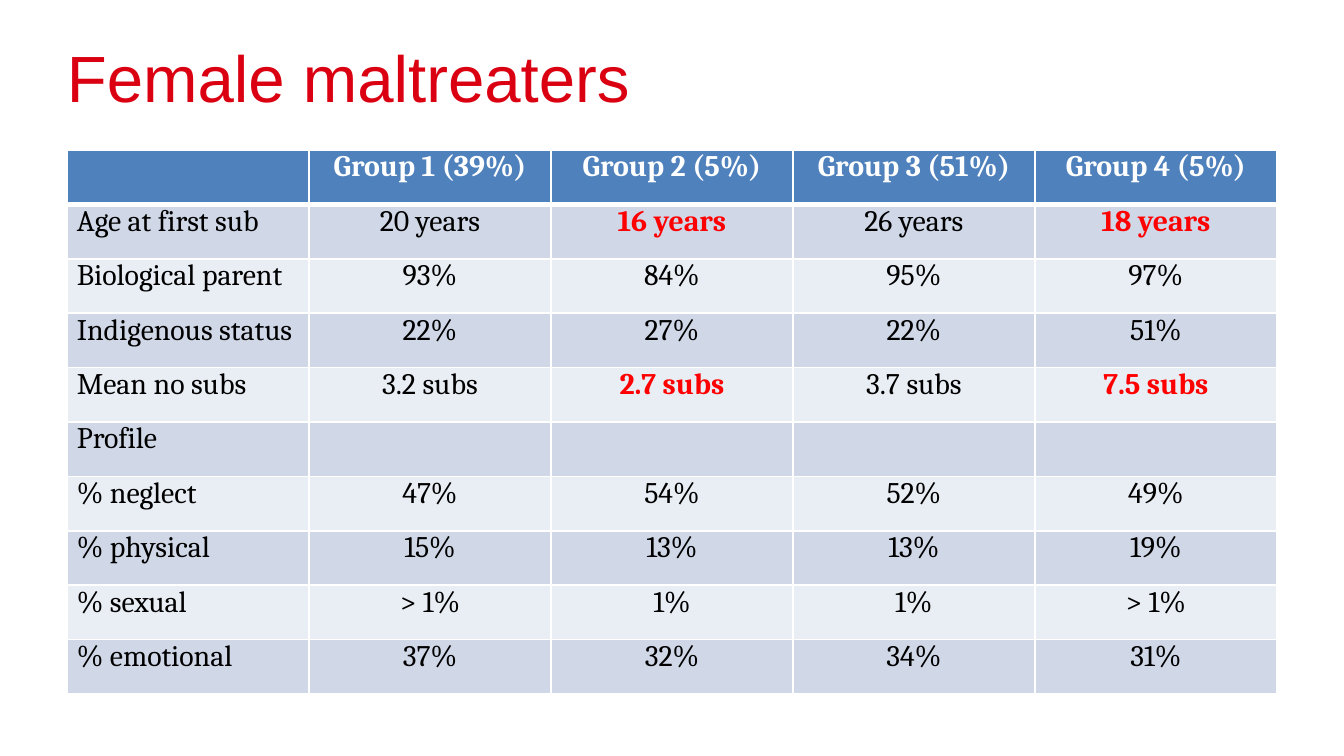
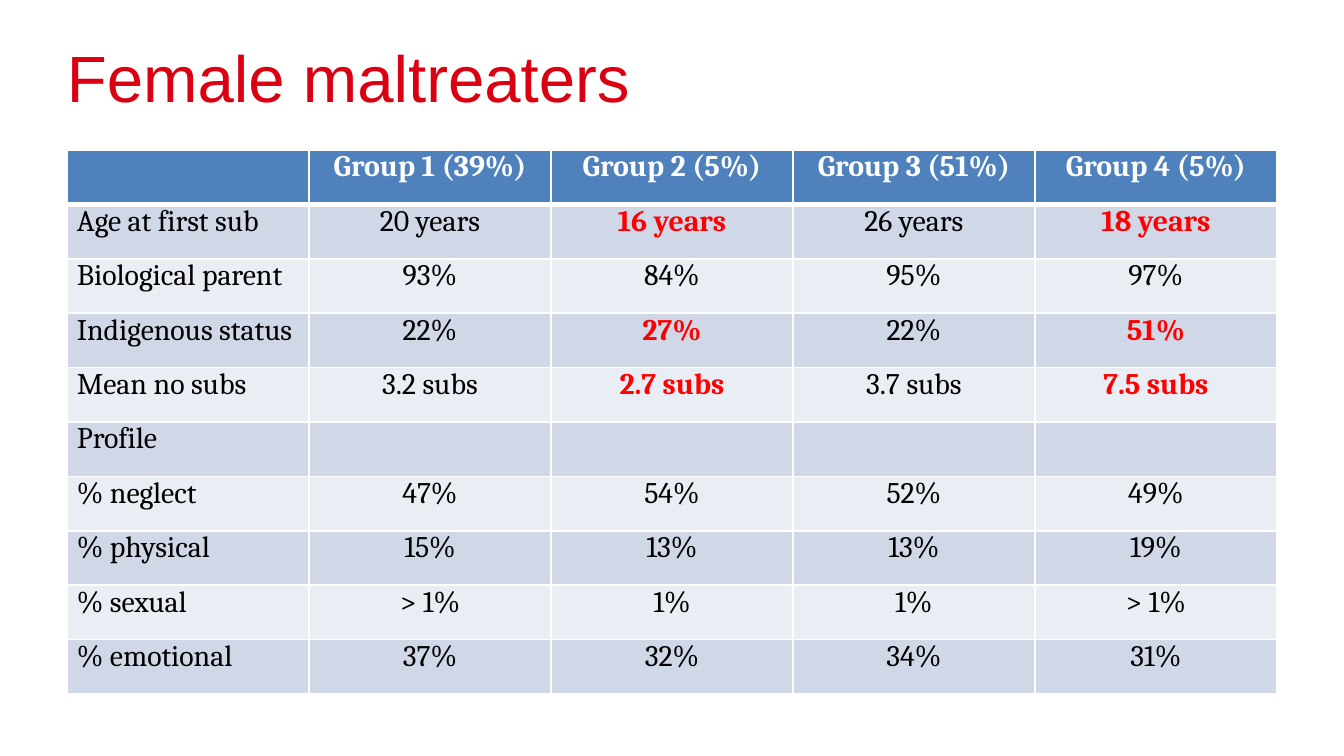
from lxml.etree import SubElement
from pptx import Presentation
from pptx.dml.color import RGBColor
from pptx.enum.text import MSO_ANCHOR as Anchor, PP_ALIGN as Align
from pptx.oxml.ns import qn
from pptx.util import Pt

# Content
TITLE = "Female maltreaters"
ROWS = [
    ("", "Group 1 (39%)", "Group 2 (5%)", "Group 3 (51%)", "Group 4 (5%)"),
    ("Age at first sub", "20 years", "16 years", "26 years", "18 years"),
    ("Biological parent", "93%", "84%", "95%", "97%"),
    ("Indigenous status", "22%", "27%", "22%", "51%"),
    ("Mean no subs", "3.2 subs", "2.7 subs", "3.7 subs", "7.5 subs"),
    ("Profile", "", "", "", ""),
    ("% neglect", "47%", "54%", "52%", "49%"),
    ("% physical", "15%", "13%", "13%", "19%"),
    ("% sexual", "> 1%", "1%", "1%", "> 1%"),
    ("% emotional", "37%", "32%", "34%", "31%"),
]
# Rows whose Group 2 and Group 4 values stand out, for each slide
HIGHLIGHTED_ROWS = [
    ("Age at first sub", "Mean no subs"),
    ("Age at first sub", "Indigenous status", "Mean no subs"),
]
HIGHLIGHTED_COLUMNS = (2, 4)

# Style
COLORS = {
    "title": "DA0012",
    "header": "4F81BD",
    "dark_band": "D0D8E8",
    "light_band": "E9EDF4",
    "text": "000000",
    "highlight": "FF0000",
    "white": "FFFFFF",
}
SLIDE_WIDTH, SLIDE_HEIGHT = 1344, 756
LEFT, CONTENT_WIDTH = 67, 1210
TITLE_TOP, TITLE_HEIGHT = 43, 81
TABLE_TOP, TABLE_HEIGHT = 150, 544
CELL_MARGIN = 10


def px(length):
    return round(length * 914400 / 134.4)


def color(name):
    return RGBColor.from_string(COLORS[name])


def write(frame, text, *, font, size, fill, bold=False, align=Align.LEFT, spacing=None):
    paragraph = frame.paragraphs[0]
    paragraph.alignment = align
    paragraph.line_spacing = spacing
    if text:
        run = paragraph.add_run()
        run.text = text
        run.font.name = font
        run.font.size = Pt(size)
        run.font.bold = bold
        run.font.color.rgb = color(fill)


def set_borders(cell, bottom):
    properties = cell._tc.get_or_add_tcPr()
    widths = {"lnL": 1, "lnR": 1, "lnT": 1, "lnB": bottom}
    for position, (side, width) in enumerate(widths.items()):
        line = SubElement(properties, qn(f"a:{side}"), w=str(Pt(width)))
        fill = SubElement(line, qn("a:solidFill"))
        SubElement(fill, qn("a:srgbClr"), val=COLORS["white"])
        properties.insert(position, line)


def add_title(slide):
    box = slide.shapes.add_textbox(
        px(LEFT), px(TITLE_TOP), px(CONTENT_WIDTH), px(TITLE_HEIGHT))
    frame = box.text_frame
    frame.word_wrap = True
    frame.vertical_anchor = Anchor.MIDDLE
    frame.margin_left = frame.margin_right = frame.margin_top = frame.margin_bottom = 0
    write(frame, TITLE, font="Arial", size=35, fill="title", spacing=0.8)


def add_group_table(slide, highlighted_rows):
    table = slide.shapes.add_table(
        len(ROWS), len(ROWS[0]),
        px(LEFT), px(TABLE_TOP), px(CONTENT_WIDTH), px(TABLE_HEIGHT)).table
    table.horz_banding = False
    for row, values in enumerate(ROWS):
        is_header = row == 0
        band = "header" if is_header else "dark_band" if row % 2 else "light_band"
        for column, value in enumerate(values):
            cell = table.cell(row, column)
            cell.margin_left = cell.margin_right = px(CELL_MARGIN)
            cell.margin_top = cell.margin_bottom = 0
            cell.fill.solid()
            cell.fill.fore_color.rgb = color(band)
            # The header has a thick rule below it, shared with the first row
            set_borders(cell, bottom=3 if is_header else 1)
            highlighted = values[0] in highlighted_rows and column in HIGHLIGHTED_COLUMNS
            write(cell.text_frame, value, font="Cambria", size=16,
                  fill="white" if is_header else "highlight" if highlighted else "text",
                  bold=is_header or highlighted,
                  align=Align.CENTER if column else Align.LEFT)
    if len(ROWS) > 1:
        for cell in table.rows[1].cells:
            cell._tc.tcPr.find(qn("a:lnT")).set("w", str(Pt(3)))


def main():
    presentation = Presentation()
    presentation.slide_width = px(SLIDE_WIDTH)
    presentation.slide_height = px(SLIDE_HEIGHT)
    for highlighted_rows in HIGHLIGHTED_ROWS:
        slide = presentation.slides.add_slide(presentation.slide_layouts[6])
        add_title(slide)
        add_group_table(slide, highlighted_rows)
    presentation.save("out.pptx")


if __name__ == "__main__":
    main()
